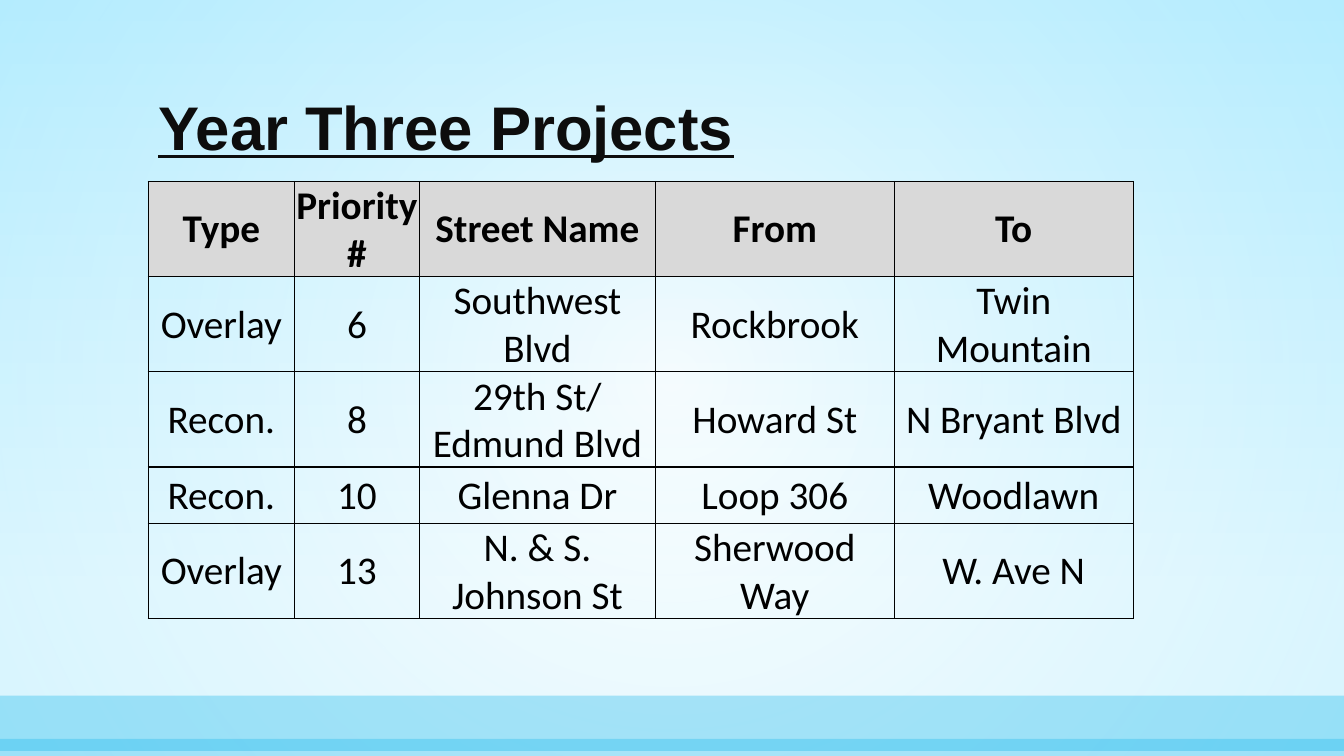
from dataclasses import dataclass

from pptx import Presentation
from pptx.dml.color import RGBColor
from pptx.enum.shapes import MSO_SHAPE
from pptx.enum.text import MSO_ANCHOR, PP_ALIGN
from pptx.oxml.ns import qn
from pptx.util import Inches, Pt
from lxml import etree

RECT = MSO_SHAPE.RECTANGLE
MIDDLE, BOTTOM = MSO_ANCHOR.MIDDLE, MSO_ANCHOR.BOTTOM
CENTER = PP_ALIGN.CENTER


@dataclass(frozen=True)
class Theme:
    title_font: str = "Arial"
    table_font: str = "Calibri"
    title_size: int = 44
    table_size: int = 28
    border_width: int = 1
    title: str = "0D0D0D"
    text: str = "000000"
    header: str = "D9D9D9"
    band: str = "00B0EA"
    sky: str = "C8F1FF"
    glow_edge: str = "91E4FF"
    white: str = "FFFFFF"


HEADERS = ["Type", "Priority #", "Street Name", "From", "To"]
PROJECTS = [
    ["Overlay", "6", "Southwest Blvd", "Rockbrook", "Twin Mountain"],
    ["Recon.", "8", "29th St/ Edmund Blvd", "Howard St", "N Bryant Blvd"],
    ["Recon.", "10", "Glenna Dr", "Loop 306", "Woodlawn"],
    ["Overlay", "13", "N. & S. Johnson St", "Sherwood Way", "W. Ave N"],
]
COLUMN_WIDTHS = [1.45, 1.24, 2.34, 2.37, 2.37]
ROW_HEIGHT = 0.56


def set_all(target, values):
    for name, value in values.items():
        setattr(target, name, value)


def set_alpha(element, percents):
    """Give each colour in the element its opacity, in order."""
    for color, percent in zip(element.iter(qn("a:srgbClr")), percents):
        etree.SubElement(color, qn("a:alpha"), val=str(percent * 1000))


def set_gradient(fill, stops):
    fill.gradient()
    for stop, (position, color) in zip(fill.gradient_stops, stops):
        stop.position = position
        stop.color.rgb = RGBColor.from_string(color)


class SlideBuilder:
    def __init__(self, prs, theme):
        self.theme = theme
        self.s = prs.slides.add_slide(prs.slide_layouts[6])

    def background(self):
        fill = self.s.background.fill
        set_gradient(fill, [(0, self.theme.sky), (0.79, self.theme.white)])
        fill.gradient_angle = 270

    def rectangle(self, x, y, w, h):
        sp = self.s.shapes.add_shape(RECT, Inches(x), Inches(y), Inches(w), Inches(h))
        sp.shadow.inherit = False
        sp.line.fill.background()
        return sp

    def glow(self, w, h):
        """Cover the slide with a translucent gradient spreading from its centre."""
        sp = self.rectangle(0, 0, w, h)
        set_gradient(sp.fill, [(0, self.theme.white), (1, self.theme.glow_edge)])
        set_alpha(sp._element.spPr, [49, 35])
        grad = sp._element.spPr.find(qn("a:gradFill"))
        grad.remove(grad.find(qn("a:lin")))
        path = etree.SubElement(grad, qn("a:path"), path="circle")
        etree.SubElement(path, qn("a:fillToRect"), dict.fromkeys("ltrb", "50000"))

    def band(self, y, w, h, opacity):
        sp = self.rectangle(0, y, w, h)
        sp.fill.solid()
        sp.fill.fore_color.rgb = RGBColor.from_string(self.theme.band)
        set_alpha(sp._element.spPr, [opacity])

    def run(self, p, text, color, **font):
        r = p.add_run()
        r.text = text
        set_all(r.font, font)
        r.font.color.rgb = RGBColor.from_string(color)

    def title(self, text, x, y, w, h):
        t = self.theme
        tf = self.s.shapes.add_textbox(
            Inches(x), Inches(y), Inches(w), Inches(h)).text_frame
        set_all(tf, {"word_wrap": True, "vertical_anchor": BOTTOM})
        p = tf.paragraphs[0]
        p.line_spacing = 0.9
        self.run(p, text, t.title, name=t.title_font, size=Pt(t.title_size),
                 bold=True, underline=True)

    def borders(self, cell):
        tcPr = cell._tc.get_or_add_tcPr()
        for side in ("lnL", "lnR", "lnT", "lnB"):
            ln = etree.SubElement(tcPr, qn(f"a:{side}"),
                                  w=str(Pt(self.theme.border_width)))
            fill = etree.SubElement(ln, qn("a:solidFill"))
            etree.SubElement(fill, qn("a:srgbClr"), val=self.theme.text)

    def cell(self, cell, text, is_header):
        t = self.theme
        set_all(cell, {
            "vertical_anchor": MIDDLE,
            "margin_left": Inches(0.01),
            "margin_right": Inches(0.01),
            "margin_top": Inches(0.01),
            "margin_bottom": 0,
        })
        self.borders(cell)
        if is_header:
            cell.fill.solid()
            cell.fill.fore_color.rgb = RGBColor.from_string(t.header)
        else:
            cell.fill.background()
        p = cell.text_frame.paragraphs[0]
        p.alignment = CENTER
        self.run(p, text, t.text, name=t.table_font, size=Pt(t.table_size),
                 bold=is_header)

    def table(self, rows, x, y):
        table = self.s.shapes.add_table(
            len(rows), len(COLUMN_WIDTHS), Inches(x), Inches(y),
            Inches(sum(COLUMN_WIDTHS)), Inches(ROW_HEIGHT * len(rows))).table
        set_all(table, {"first_row": False, "horz_banding": False})
        for column, width in zip(table.columns, COLUMN_WIDTHS):
            column.width = Inches(width)
        for i, row in enumerate(rows):
            for j, text in enumerate(row):
                self.cell(table.cell(i, j), text, i == 0)


def main():
    width, height = 13.33, 7.5
    prs = Presentation()
    set_all(prs, {"slide_width": Inches(width), "slide_height": Inches(height)})
    slide = SlideBuilder(prs, Theme())
    slide.background()
    slide.glow(width, height)
    slide.band(6.9, width, 0.55, 30)
    slide.band(7.33, width, 0.17, 28)
    slide.title("Year Three Projects", 1.47, 0.48, 10.4, 1.19)
    slide.table([HEADERS] + PROJECTS, 1.47, 1.8)
    prs.save("out.pptx")


if __name__ == "__main__":
    main()
